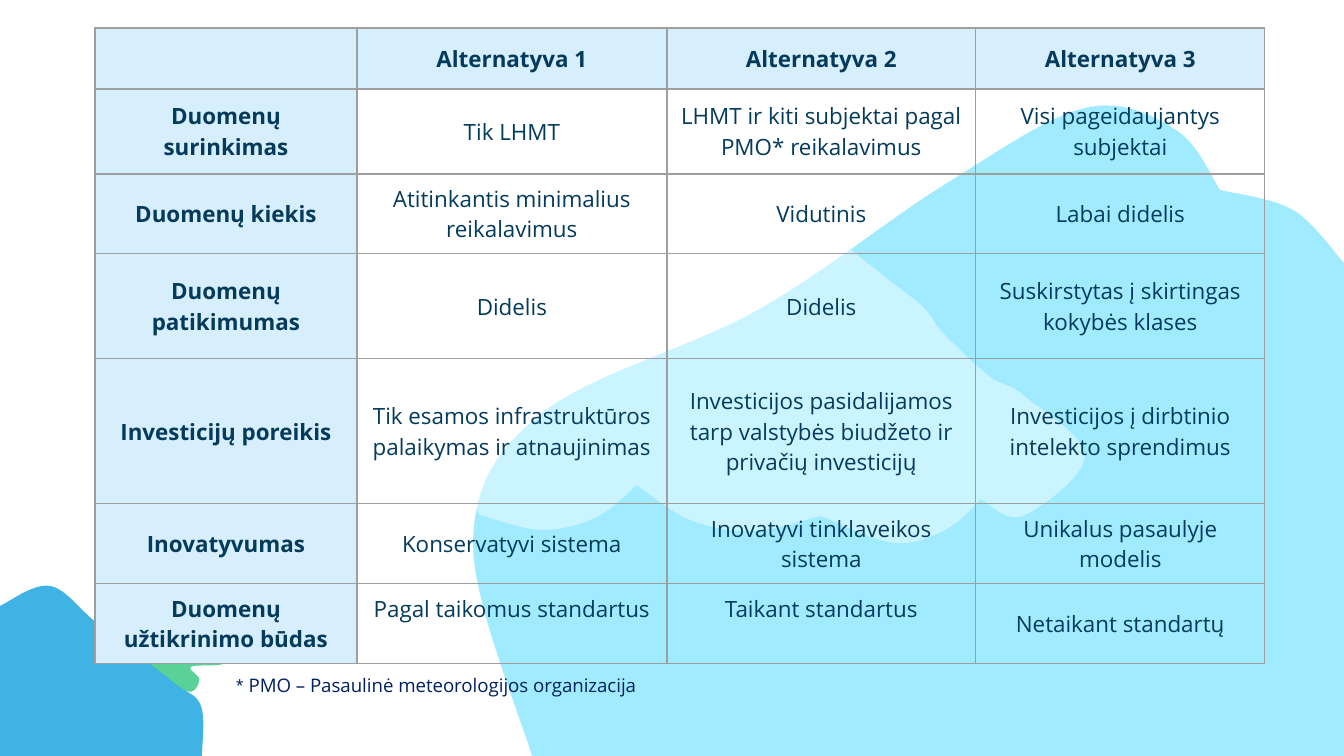
"""Builds a slide comparing three alternatives in a table over wavy shapes."""
from dataclasses import dataclass

from lxml.etree import SubElement
from pptx import Presentation
from pptx.dml.color import RGBColor
from pptx.enum.text import MSO_ANCHOR as Anchor, PP_ALIGN as Align
from pptx.oxml.ns import qn
from pptx.util import Emu, Pt

SCALE = 9144000 / 1344
STEPS = 12
COLORS = {"leaf": "5AD199", "wave": "3FB3E4", "bay": "A0EBFF", "cloud": "FFFFFF",
          "header": "D7EFFD", "text": "043A5B", "border": "9E9E9E", "note": "002060"}
Point = tuple[float, float]


@dataclass
class Blob:
    """An outline of strokes, smooth inside each stroke and cornered between them."""
    color: str
    strokes: list[list[Point]]
    rotation: float = 0
    alpha: int = 100


BLOBS = [
    Blob("leaf", [[(203, 564), (180, 594), (136, 603), (134, 655), (130, 668), (165, 680),
                   (194, 692), (203, 679), (194, 667), (227, 661), (222, 642), (261, 629),
                   (245, 601), (249, 573), (212, 578)]], rotation=4.1),
    Blob("wave", [[(0, 606), (50, 586), (98, 624), (173, 682), (201, 706), (202, 756)],
                  [(0, 756)]]),
    Blob("bay", [[(1220, 190), (1176, 130), (1085, 108), (944, 185), (758, 310), (542, 413),
                  (473, 542), (532, 756)],
                 [(1344, 756)], [(1344, 263), (1293, 210), (1220, 190)]]),
    Blob("cloud", [[(480, 515), (542, 530), (597, 517), (637, 485)],
                   [(637, 485), (690, 520), (753, 531), (821, 516)],
                   [(821, 516), (894, 543), (947, 529), (981, 499)],
                   [(981, 499), (1023, 516), (1085, 456), (1023, 395), (989, 376), (943, 333),
                    (906, 293), (753, 195), (629, 249), (542, 282), (417, 406), (480, 515)]],
         alpha=45),
]

COLS = [262, 310, 309, 289]
ROWS = [61, 85, 80, 105, 145, 80, 80]
CELLS = [
    ["", "Alternatyva 1", "Alternatyva 2", "Alternatyva 3"],
    ["Duomenų surinkimas", "Tik LHMT", "LHMT ir kiti subjektai pagal PMO* reikalavimus",
     "Visi pageidaujantys subjektai"],
    ["Duomenų kiekis", "Atitinkantis minimalius reikalavimus", "Vidutinis", "Labai didelis"],
    ["Duomenų patikimumas", "Didelis", "Didelis", "Suskirstytas į skirtingas kokybės klases"],
    ["Investicijų poreikis", "Tik esamos infrastruktūros palaikymas ir atnaujinimas",
     "Investicijos pasidalijamos tarp valstybės biudžeto ir privačių investicijų",
     "Investicijos į dirbtinio intelekto sprendimus"],
    ["Inovatyvumas", "Konservatyvi sistema", "Inovatyvi tinklaveikos sistema",
     "Unikalus pasaulyje modelis"],
    ["Duomenų užtikrinimo būdas", "Pagal taikomus standartus", "Taikant standartus",
     "Netaikant standartų"],
]
TOP_CELLS = {(6, 1), (6, 2)}


def px(n: float) -> Emu:
    return Emu(round(n * SCALE))


def rgb(name: str) -> RGBColor:
    return RGBColor.from_string(COLORS[name])


def spline(a: float, b: float, c: float, d: float, t: float) -> float:
    return b + t * (c - a + t * (2 * a - 5 * b + 4 * c - d + t * (3 * (b - c) + d - a))) / 2


def smooth(stroke: list[Point]) -> list[Point]:
    padded = [stroke[0], *stroke, stroke[-1]]
    points = [stroke[0]]
    for quad in zip(padded, padded[1:], padded[2:], padded[3:]):
        xs, ys = zip(*quad)
        points += [(spline(*xs, i / STEPS), spline(*ys, i / STEPS)) for i in range(1, STEPS + 1)]
    return points


def draw_blob(s, blob: Blob) -> None:
    points = [(px(x), px(y)) for stroke in blob.strokes for x, y in smooth(stroke)]
    builder = s.shapes.build_freeform(*points[0], scale=1.0)
    builder.add_line_segments(points[1:], close=True)
    sp = builder.convert_to_shape()
    sp.shadow.inherit = False
    sp.rotation = blob.rotation
    sp.fill.solid()
    sp.fill.fore_color.rgb = rgb(blob.color)
    sp.line.fill.background()
    if blob.alpha < 100:
        color = sp._element.spPr.find(qn("a:solidFill"))[0]
        SubElement(color, qn("a:alpha"), val=str(blob.alpha * 1000))


def add_run(p, text: str, color: str, **fmt) -> None:
    r = p.add_run()
    r.text = text
    r.font.color.rgb = rgb(color)
    for key, value in fmt.items():
        setattr(r.font, key, value)


def add_borders(cell) -> None:
    tc_pr = cell._tc.get_or_add_tcPr()
    for i, side in enumerate(("lnL", "lnR", "lnT", "lnB")):
        ln = tc_pr.makeelement(qn(f"a:{side}"), {"w": str(Pt(0.75))})
        fill = SubElement(ln, qn("a:solidFill"))
        SubElement(fill, qn("a:srgbClr"), val=COLORS["border"])
        tc_pr.insert(i, ln)


def draw_cell(cell, text: str, header: bool, top: bool) -> None:
    if header:
        cell.fill.solid()
        cell.fill.fore_color.rgb = rgb("header")
    else:
        cell.fill.background()
    cell.vertical_anchor = Anchor.TOP if top else Anchor.MIDDLE
    if top:
        cell.margin_top = px(10)
    add_borders(cell)
    p = cell.text_frame.paragraphs[0]
    p.alignment = Align.CENTER
    if text:
        add_run(p, text, "text", name="Open Sans", size=Pt(12), bold=header)


def draw_table(s) -> None:
    frame = s.shapes.add_table(len(ROWS), len(COLS), px(95), px(28), px(sum(COLS)), px(sum(ROWS)))
    table = frame.table
    table.first_row = table.horz_banding = False
    for col, width in zip(table.columns, COLS):
        col.width = px(width)
    for i, (row, height) in enumerate(zip(table.rows, ROWS)):
        row.height = px(height)
        for j, text in enumerate(CELLS[i]):
            draw_cell(table.cell(i, j), text, i == 0 or j == 0, (i, j) in TOP_CELLS)


def draw_note(s) -> None:
    tf = s.shapes.add_textbox(px(223), px(667), px(431), px(36)).text_frame
    tf.word_wrap = False
    p = tf.paragraphs[0]
    add_run(p, "* ", "note", name="Arial", size=Pt(10))
    add_run(p, "PMO – Pasaulinė meteorologijos organizacija", "note", name="Open Sans", size=Pt(10))


def main() -> None:
    prs = Presentation()
    prs.slide_width, prs.slide_height = px(1344), px(756)
    s = prs.slides.add_slide(prs.slide_layouts[6])
    for blob in BLOBS:
        draw_blob(s, blob)
    draw_table(s)
    draw_note(s)
    prs.save("out.pptx")


if __name__ == "__main__":
    main()
